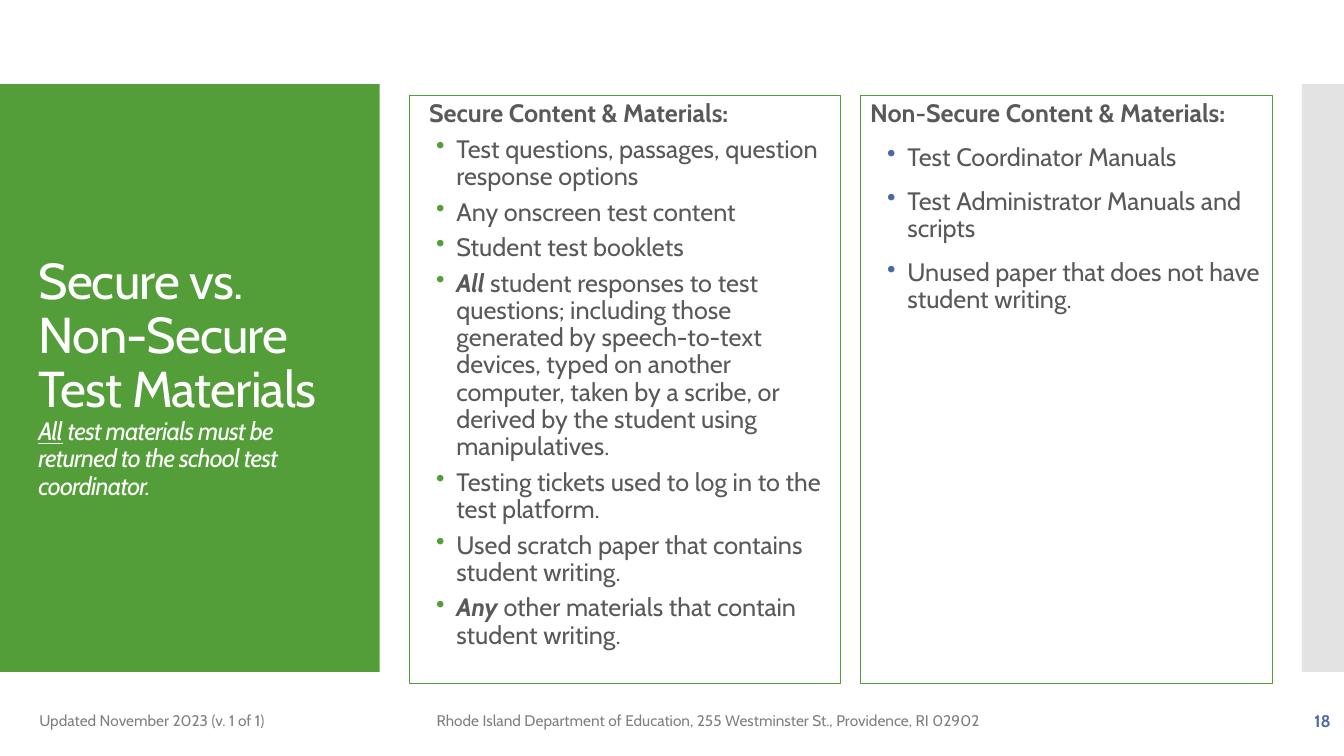
import pptx
import pptx.dml.color
import pptx.enum.shapes
import pptx.enum.text
import pptx.oxml.ns
import pptx.util
from lxml import etree

GREEN, BLUE, WHITE = "549E39", "4A66AC", "FFFFFF"
TEXT_GREY, FOOTER_GREY, BAND_GREY = "595959", "808080", "C8C8C8"
COLUMNS, ROWS = 160, 90
ALIGN = pptx.enum.text.PP_ALIGN
ANCHOR = pptx.enum.text.MSO_ANCHOR

SECURE_ITEMS = [
    [("Test questions, passages, question response options", "")],
    [("Any onscreen test content", "")],
    [("Student test booklets", "")],
    [("All", "bi"), (" student responses to test questions; including those generated by "
                     "speech-to-text devices, typed on another computer, taken by a scribe, "
                     "or derived by the student using manipulatives.", "")],
    [("Testing tickets used to log in to the test platform.", "")],
    [("Used scratch paper that contains student writing.", "")],
    [("Any", "bi"), (" other materials that contain student writing.", "")],
]
NON_SECURE_ITEMS = [
    [("Test Coordinator Manuals", "")],
    [("Test Administrator Manuals and scripts", "")],
    [("Unused paper that does not have student writing.", "")],
]


def rgb(value):
    return pptx.dml.color.RGBColor.from_string(value)


def add_xml(parent, tag, **attributes):
    return etree.SubElement(parent, pptx.oxml.ns.qn(tag), attributes)


class SlideBuilder:
    """Places elements on a slide; boxes are (left, top, width, height) in grid cells."""

    font = "Cabin"

    def __init__(self, presentation):
        self.slide = presentation.slides.add_slide(presentation.slide_layouts[6])
        self.column = presentation.slide_width / COLUMNS
        self.row = presentation.slide_height / ROWS

    def place(self, box):
        left, top, width, height = box
        return [round(cells * unit) for cells, unit in
                ((left, self.column), (top, self.row), (width, self.column), (height, self.row))]

    def rectangle(self, box, fill=None, line=None, opacity=None):
        kind = pptx.enum.shapes.MSO_SHAPE.RECTANGLE
        shape = self.slide.shapes.add_shape(kind, *self.place(box))
        shape.shadow.inherit = False
        if fill:
            shape.fill.solid()
            shape.fill.fore_color.rgb = rgb(fill)
        else:
            shape.fill.background()
        if line:
            shape.line.color.rgb = rgb(line)
            shape.line.width = pptx.util.Pt(0.75)
        else:
            shape.line.fill.background()
        if opacity:
            color = shape.fill._xPr.find(".//" + pptx.oxml.ns.qn("a:srgbClr"))
            add_xml(color, "a:alpha", val=str(opacity * 1000))
        return shape

    def text_box(self, box):
        shape = self.slide.shapes.add_textbox(*self.place(box))
        shape.text_frame.word_wrap = True
        shape.text_frame.vertical_anchor = ANCHOR.MIDDLE
        return shape.text_frame

    def style(self, run, size, color, flags=""):
        """Flags are any of the letters b, i and u."""
        run.font.name = self.font
        run.font.size = pptx.util.Pt(size)
        run.font.color.rgb = rgb(color)
        run.font.bold = "b" in flags
        run.font.italic = "i" in flags
        run.font.underline = "u" in flags

    def add_pieces(self, paragraph, pieces, size, color):
        for text, flags in pieces:
            run = paragraph.add_run()
            run.text = text
            self.style(run, size, color, flags)

    def title(self, box, heading, note):
        paragraph = self.text_box(box).paragraphs[0]
        paragraph.line_spacing = 0.9
        paragraph.text = heading
        for run in paragraph.runs:
            self.style(run, 36, WHITE)
        self.add_pieces(paragraph, note, 18, WHITE)
        for run in paragraph.runs:
            run.font._element.set("spc", "-60")

    def panel(self, box, heading, items, bullet_color, before, after, heading_indent=0):
        """A framed list with a bold heading."""
        frame = self.rectangle(box, line=GREEN).text_frame
        frame.word_wrap = True
        frame.vertical_anchor = ANCHOR.TOP
        for index, pieces in enumerate([[(heading, "b")]] + items):
            paragraph = frame.add_paragraph() if index else frame.paragraphs[0]
            paragraph.alignment = ALIGN.LEFT
            paragraph.line_spacing = 0.9
            paragraph.space_before = pptx.util.Pt(before)
            paragraph.space_after = pptx.util.Pt(after)
            self.add_pieces(paragraph, pieces, 18, TEXT_GREY)
            self.indent(paragraph, *((0.37, -0.2) if index else (heading_indent, 0)))
            if index:
                self.bullet(paragraph, bullet_color)

    def indent(self, paragraph, margin, first_line):
        properties = paragraph._p.get_or_add_pPr()
        properties.set("marL", str(pptx.util.Inches(margin)))
        properties.set("indent", str(pptx.util.Inches(first_line)))

    def bullet(self, paragraph, color):
        properties = paragraph._p.get_or_add_pPr()
        add_xml(add_xml(properties, "a:buClr"), "a:srgbClr", val=color)
        add_xml(properties, "a:buChar", char="•")

    def footer(self, left, width, text, size=11, color=FOOTER_GREY, flags="", align=ALIGN.LEFT):
        paragraph = self.text_box((left, 83.4, width, 4.8)).paragraphs[0]
        paragraph.text = text
        paragraph.alignment = align
        self.style(paragraph.runs[0], size, color, flags)


def main():
    presentation = pptx.Presentation()
    presentation.slide_width = pptx.util.Inches(13.33)
    presentation.slide_height = pptx.util.Inches(7.5)
    builder = SlideBuilder(presentation)

    builder.rectangle((0, 10, 45.2, 70), fill=GREEN)
    builder.rectangle((155, 10, 5, 70), fill=BAND_GREY, opacity=50)
    builder.title((3.4, 14.8, 38.6, 60.4), "Secure vs. \vNon-Secure Test Materials\v",
                  [("All", "iu"),
                   (" test materials must be returned to the school test coordinator.", "i")])
    builder.panel((48.7, 11.4, 51.4, 70), "Secure Content & Materials:", SECURE_ITEMS,
                  GREEN, before=3, after=3, heading_indent=0.1)
    builder.panel((102.4, 11.4, 49.1, 70), "Non-Secure Content & Materials:", NON_SECURE_ITEMS,
                  BLUE, before=12, after=0)
    builder.footer(3.5, 36, "Updated November 2023 (v. 1 of 1)")
    builder.footer(50.8, 77.5, "Rhode Island Department of Education, "
                               "255 Westminster St., Providence, RI 02902")
    builder.footer(139.6, 20, "18", size=12, color=BLUE, flags="b", align=ALIGN.RIGHT)

    presentation.save("out.pptx")


if __name__ == "__main__":
    main()
